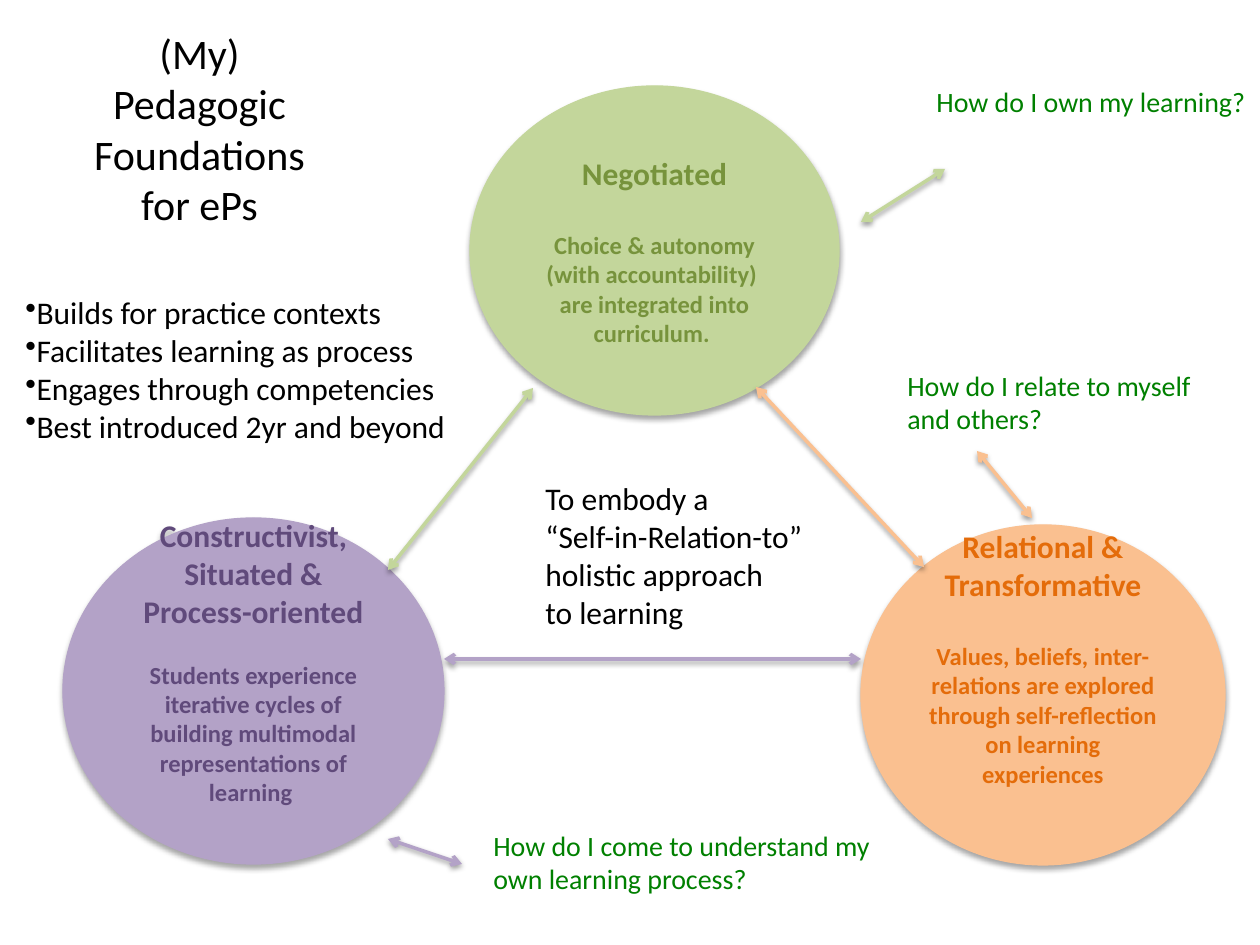
from lxml.etree import SubElement
from pptx import Presentation
from pptx.dml.color import RGBColor
from pptx.enum.shapes import MSO_CONNECTOR, MSO_SHAPE
from pptx.enum.text import MSO_ANCHOR, PP_ALIGN
from pptx.oxml.ns import qn
from pptx.util import Emu, Pt

EMU_PER_PIXEL = 914400 / 126
FONT = "Calibri"
COLORS = {
    "black": "000000",
    "question": "008000",
    "green": "C3D69B",
    "green_text": "77933C",
    "purple": "B3A2C7",
    "purple_text": "604A7B",
    "orange": "FAC090",
    "orange_text": "E46C0A",
}


def px(length):
    """Turn a length in pixels into EMU."""
    return Emu(round(length * EMU_PER_PIXEL))


def color(name):
    """Look up a named colour."""
    return RGBColor.from_string(COLORS[name])


def add_shadow(properties, opacity, distance):
    """Append a soft downward shadow to shape properties."""
    effects = properties.find(qn("a:effectLst"))
    if effects is None:
        effects = SubElement(properties, qn("a:effectLst"))
    shadow = SubElement(effects, qn("a:outerShdw"), blurRad=str(Pt(3.1)),
                        dist=str(Pt(distance)), dir="5400000", rotWithShape="0")
    black = SubElement(shadow, qn("a:srgbClr"), val=COLORS["black"])
    SubElement(black, qn("a:alpha"), val=str(opacity * 1000))


def add_para(frame, text, size, tint, bold=False, align=PP_ALIGN.LEFT):
    """Add a one-run paragraph, using the empty first one when it is free."""
    first = frame.paragraphs[0]
    para = frame.add_paragraph() if first.runs else first
    para.alignment = align
    span = para.add_run()
    span.text = text
    span.font.name = FONT
    span.font.size = Pt(size)
    span.font.bold = bold
    span.font.color.rgb = color(tint)
    return para


def add_text(page, box, lines, size, tint="black", wrap=True, bullet=False):
    """Place a text box with one paragraph per line."""
    frame = page.shapes.add_textbox(*map(px, box)).text_frame
    frame.word_wrap = wrap
    for line in lines:
        para = add_para(frame, line, size, tint)
        if bullet:
            SubElement(para._p.get_or_add_pPr(), qn("a:buChar"), char="•")
    return frame


def add_title(page, box):
    """Place the centred slide title, raised by one line."""
    frame = add_text(page, box, ["(My) Pedagogic Foundations for ePs"], 24)
    frame.paragraphs[0].alignment = PP_ALIGN.CENTER
    frame.vertical_anchor = MSO_ANCHOR.MIDDLE
    frame.margin_bottom = px(56)


def add_foundation(page, box, hue, heading, body, gap, raised):
    """Draw one foundation circle with its heading and body."""
    circle = page.shapes.add_shape(MSO_SHAPE.OVAL, *map(px, box))
    circle.shadow.inherit = False
    circle.fill.solid()
    circle.fill.fore_color.rgb = color(hue)
    circle.line.color.rgb = color(hue)
    circle.line.width = Pt(0.75)
    add_shadow(circle._element.spPr, 35, 1.8)
    frame = circle.text_frame
    frame.word_wrap = True
    frame.vertical_anchor = MSO_ANCHOR.MIDDLE
    frame.margin_bottom = px(6 + raised)
    tint = f"{hue}_text"
    add_para(frame, heading, 18, tint, True, PP_ALIGN.CENTER)
    paras = [add_para(frame, line, 14, tint, True, PP_ALIGN.CENTER) for line in body]
    paras[0].space_before = Pt(gap)


def add_arrow(page, start, end, hue):
    """Draw a two-headed arrow between two points."""
    arrow = page.shapes.add_connector(MSO_CONNECTOR.STRAIGHT, *map(px, start + end))
    arrow.line.color.rgb = color(hue)
    arrow.line.width = Pt(2)
    outline = arrow.line._get_or_add_ln()
    for side in ("a:headEnd", "a:tailEnd"):
        SubElement(outline, qn(side), type="arrow")
    add_shadow(arrow._element.spPr, 38, 1.6)


def add_foundations(page):
    """Draw the three foundation circles."""
    add_foundation(page, (861, 525, 364, 340), "orange", "Relational & Transformative",
                   ["Values, beliefs, inter-relations are explored through "
                    "self-reflection on learning experiences"], 22, 75)
    add_foundation(page, (470, 86, 369, 329), "green", "Negotiated",
                   ["Choice & autonomy", "(with accountability) ",
                    "are integrated into curriculum. "], 22, 0)
    add_foundation(page, (63, 518, 381, 346), "purple",
                   "Constructivist, Situated & Process-oriented",
                   ["Students experience iterative cycles of building multimodal "
                    "representations of learning "], 17, 59)


def add_arrows(page):
    """Link the circles to each other and to their questions."""
    for start, end, hue in (
        ((861, 222), (945, 169), "green"),
        ((388, 839), (462, 864), "purple"),
        ((1032, 518), (977, 451), "orange"),
        ((388, 570), (533, 388), "green"),
        ((924, 567), (756, 387), "orange"),
        ((444, 659), (861, 659), "purple"),
    ):
        add_arrow(page, start, end, hue)


def add_texts(page):
    """Place the questions, the central aim and the bullet list."""
    add_text(page, (924, 78, 336, 115), ["How do I own my learning?"], 16, "question")
    add_text(page, (481, 822, 413, 81),
             ["How do I come to understand my own learning process?"], 16, "question")
    add_text(page, (895, 362, 338, 158),
             ["How do I relate to myself", "and others?"], 16, "question", wrap=False)
    add_text(page, (533, 473, 301, 165),
             ["To embody a", "“Self-in-Relation-to”", "holistic approach", "to learning"],
             18, wrap=False)
    add_text(page, (13, 287, 450, 165),
             ["Builds for practice contexts", "Facilitates learning as process",
              "Engages through competencies", "Best introduced 2yr and beyond"],
             18, wrap=False, bullet=True)


def main():
    """Build and save the deck."""
    deck = Presentation()
    deck.slide_width, deck.slide_height = px(1260), px(945)
    page = deck.slides.add_slide(deck.slide_layouts[6])
    add_title(page, (63, 74, 273, 158))
    add_foundations(page)
    add_arrows(page)
    add_texts(page)
    deck.save("out.pptx")


if __name__ == "__main__":
    main()
